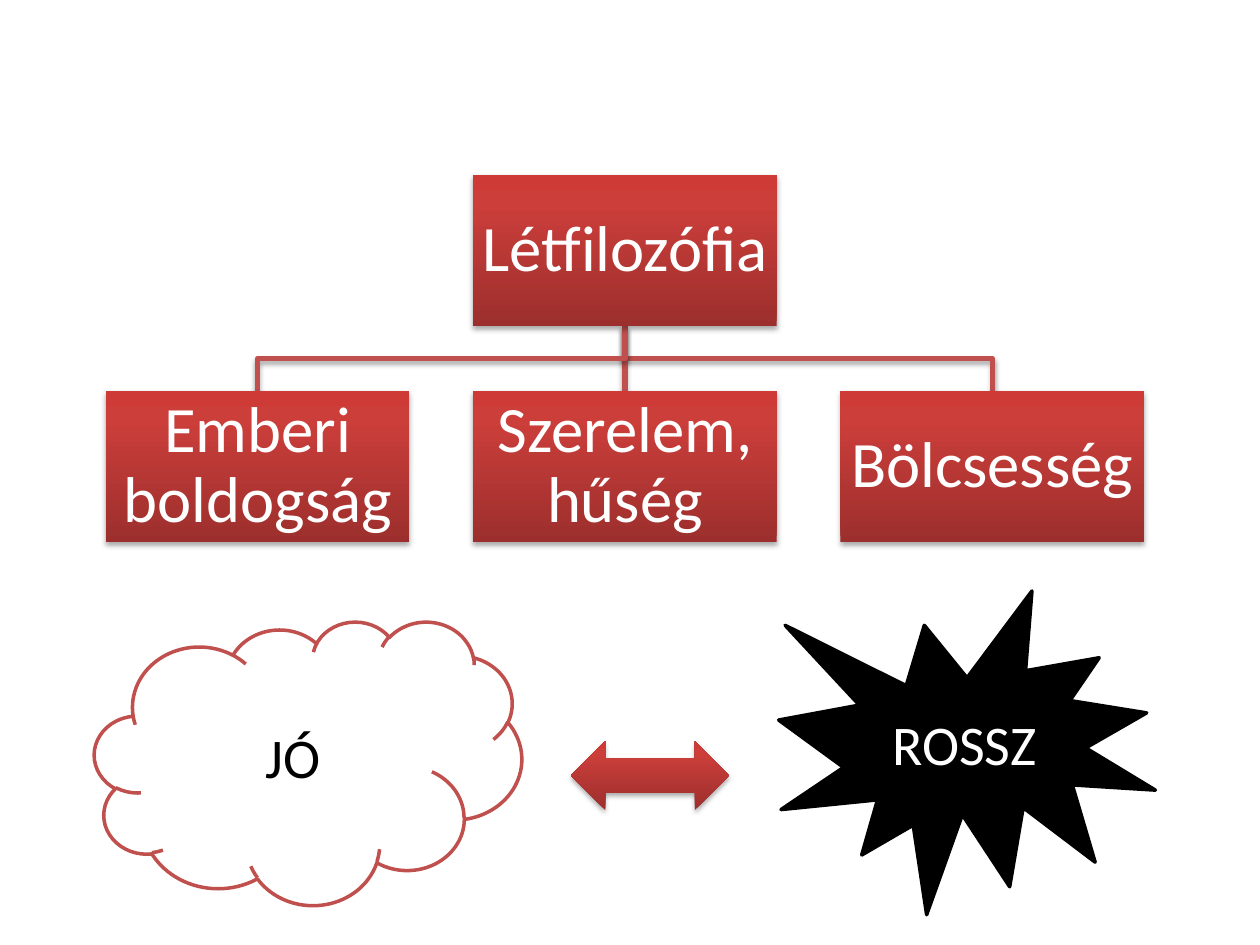
from copy import deepcopy

from pptx import Presentation
from pptx.dml.color import RGBColor
from pptx.enum.shapes import MSO_CONNECTOR, MSO_SHAPE
from pptx.enum.text import MSO_ANCHOR, PP_ALIGN
from pptx.oxml.ns import qn
from pptx.oxml.xmlchemy import OxmlElement
from pptx.util import Inches, Pt

STRAIGHT = MSO_CONNECTOR.STRAIGHT
RECTANGLE = MSO_SHAPE.RECTANGLE
CLOUD = MSO_SHAPE.CLOUD
BURST = MSO_SHAPE.EXPLOSION1
DOUBLE_ARROW = MSO_SHAPE.LEFT_RIGHT_ARROW
MIDDLE = MSO_ANCHOR.MIDDLE
CENTER = PP_ALIGN.CENTER
BOTTOM_SITE, TOP_SITE = 2, 0

COLORS = {"red": "C0504D", "white": "FFFFFF", "black": "000000"}
GRADIENT = ((0, "9C2F2D"), (0.8, "CB3E3A"), (1, "CE3B37"))
FONT = "Calibri"

BOX_WIDTH, BOX_HEIGHT = 2.41, 1.2
ROOT_TOP, CHILD_TOP = 1.39, 3.1
CHILD_LEFT, CHILD_STEP = 0.84, 2.915
ROOT = "Létfilozófia"
CHILDREN = ("Emberi boldogság", "Szerelem,\vhűség", "Bölcsesség")


def rgb(name):
    return RGBColor.from_string(COLORS[name])


def add_shadow(shape):
    """Give a shape or connector a soft shadow straight below it."""
    properties = shape._element.spPr
    for old_effects in properties.findall(qn("a:effectLst")):
        properties.remove(old_effects)
    effects = OxmlElement("a:effectLst")
    shadow = OxmlElement("a:outerShdw")
    settings = {"blurRad": Pt(3.1), "dist": Pt(1.8), "dir": 90 * 60000, "rotWithShape": 0}
    for key, value in settings.items():
        shadow.set(key, str(value))
    color = OxmlElement("a:srgbClr")
    color.set("val", COLORS["black"])
    alpha = OxmlElement("a:alpha")
    alpha.set("val", "35000")
    color.append(alpha)
    shadow.append(color)
    effects.append(shadow)
    properties.append(effects)


def add_figure(slide, kind, left, top, width, height):
    shape = slide.shapes.add_shape(
        kind, Inches(left), Inches(top), Inches(width), Inches(height))
    shape.shadow.inherit = False
    return shape


def style_solid(shape, fill, line):
    shape.fill.solid()
    shape.fill.fore_color.rgb = rgb(fill)
    shape.line.color.rgb = rgb(line)
    shape.line.width = Pt(2)


def style_gradient(shape):
    shape.fill.gradient()
    shape.fill.gradient_angle = 90
    stop_list = shape._element.spPr.find(qn("a:gradFill")).find(qn("a:gsLst"))
    stop_list.append(deepcopy(stop_list[0]))
    for stop, (position, color) in zip(shape.fill.gradient_stops, GRADIENT):
        stop.position = position
        stop.color.rgb = RGBColor.from_string(color)
    shape.line.fill.background()
    add_shadow(shape)


def set_text(shape, text, size, color):
    frame = shape.text_frame
    frame.word_wrap = True
    frame.vertical_anchor = MIDDLE
    paragraph = frame.paragraphs[0]
    paragraph.text = text
    paragraph.alignment = CENTER
    for run in paragraph.runs:
        run.font.name = FONT
        run.font.size = Pt(size)
        run.font.color.rgb = rgb(color)


def add_box(slide, text, left, top):
    box = add_figure(slide, RECTANGLE, left, top, BOX_WIDTH, BOX_HEIGHT)
    style_gradient(box)
    set_text(box, text, 37, "white")
    frame = box.text_frame
    frame.margin_left = frame.margin_right = Inches(0.03)
    frame.margin_top = frame.margin_bottom = Inches(0.03)
    frame.paragraphs[0].line_spacing = 0.9
    return box


def style_branch(branch):
    branch.line.color.rgb = rgb("red")
    branch.line.width = Pt(3)
    add_shadow(branch)


def add_elbow(slide, start_x, end_x):
    """Draw a branch that goes down, across and down from root to child."""
    start_y = ROOT_TOP + BOX_HEIGHT
    middle_y = (start_y + CHILD_TOP) / 2
    builder = slide.shapes.build_freeform(Inches(start_x), Inches(start_y))
    corners = ((start_x, middle_y), (end_x, middle_y), (end_x, CHILD_TOP))
    builder.add_line_segments(
        [(Inches(x), Inches(y)) for x, y in corners], close=False)
    elbow = builder.convert_to_shape()
    elbow.fill.background()
    style_branch(elbow)


def add_hierarchy(slide):
    lefts = [CHILD_LEFT + index * CHILD_STEP for index in range(len(CHILDREN))]
    centers = [left + BOX_WIDTH / 2 for left in lefts]
    add_elbow(slide, centers[1], centers[2])
    stem = slide.shapes.add_connector(STRAIGHT, 0, 0, 0, 0)
    style_branch(stem)
    add_elbow(slide, centers[1], centers[0])

    root = add_box(slide, ROOT, lefts[1], ROOT_TOP)
    children = [add_box(slide, text, left, CHILD_TOP)
                for text, left in zip(CHILDREN, lefts)]
    stem.begin_connect(root, BOTTOM_SITE)
    stem.end_connect(children[1], TOP_SITE)


def add_contrast(slide):
    bad = add_figure(slide, BURST, 6.18, 4.69, 2.99, 2.57)
    style_solid(bad, "black", "black")
    set_text(bad, "ROSSZ", 32, "white")

    style_gradient(add_figure(slide, DOUBLE_ARROW, 4.53, 5.88, 1.26, 0.55))

    good = add_figure(slide, CLOUD, 0.75, 4.93, 3.39, 2.25)
    style_solid(good, "white", "red")
    set_text(good, "JÓ", 32, "black")


def main():
    presentation = Presentation()
    presentation.slide_width = Inches(10)
    presentation.slide_height = Inches(7.5)
    slide = presentation.slides.add_slide(presentation.slide_layouts[6])
    add_hierarchy(slide)
    add_contrast(slide)
    presentation.save("out.pptx")


if __name__ == "__main__":
    main()
